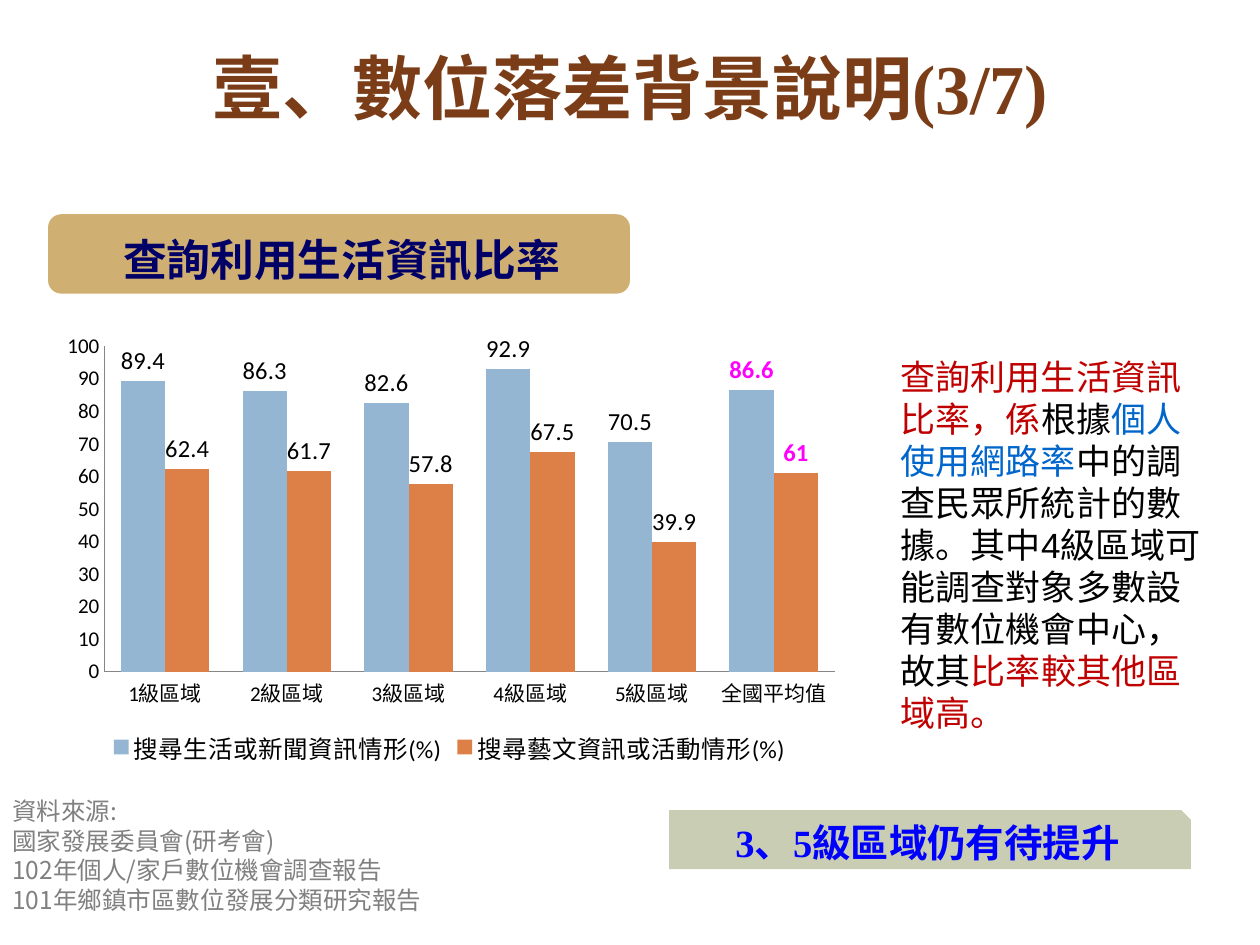
"""Build the slide on the share of residents looking up everyday information online."""
import pptx
import pptx.chart.data
import pptx.dml.color
import pptx.enum.chart
import pptx.enum.shapes
import pptx.enum.text
import pptx.oxml
import pptx.oxml.ns
import pptx.util

Cm = pptx.util.Cm
ALIGN = pptx.enum.text.PP_ALIGN
ANCHOR = pptx.enum.text.MSO_ANCHOR
SHAPE = pptx.enum.shapes.MSO_SHAPE


def color(hex_value):
    return pptx.dml.color.RGBColor.from_string(hex_value)


def style(font, hex_value, **values):
    for name, value in values.items():
        setattr(font, name, value)
    font.color.rgb = color(hex_value)


deck = pptx.Presentation()
deck.slide_width, deck.slide_height = Cm(25.4), Cm(19.05)
slide = deck.slides.add_slide(deck.slide_layouts[1])
shapes = slide.shapes
title, subtitle = shapes.title, slide.placeholders[1]

badge = shapes.add_shape(SHAPE.ROUNDED_RECTANGLE, Cm(0.97), Cm(4.32), Cm(11.73), Cm(1.6))
subtitle._element.addprevious(badge._element)
conclusion = shapes.add_shape(SHAPE.SNIP_1_RECTANGLE, Cm(13.49), Cm(16.33), Cm(10.52), Cm(1.19))
for panel, fill in ((badge, "D0AF72"), (conclusion, "C9CDB3")):
    panel.shadow.inherit = False
    panel.fill.solid()
    panel.fill.fore_color.rgb = color(fill)
    panel.line.fill.background()

figures = pptx.chart.data.CategoryChartData()
figures.categories = ["1級區域", "2級區域", "3級區域", "4級區域", "5級區域", "全國平均值"]
figures.add_series("搜尋生活或新聞資訊情形(%)", [89.4, 86.3, 82.6, 92.9, 70.5, 86.6])
figures.add_series("搜尋藝文資訊或活動情形(%)", [62.4, 61.7, 57.8, 67.5, 39.9, 61])
rates = shapes.add_chart(
    pptx.enum.chart.XL_CHART_TYPE.COLUMN_CLUSTERED,
    Cm(0.97), Cm(6.53), Cm(16.18), Cm(8.99), figures,
).chart
style(rates.font, "000000", name="Calibri", size=pptx.util.Pt(10))
rates.has_title = False
rates.has_legend = True
rates.legend.position = pptx.enum.chart.XL_LEGEND_POSITION.BOTTOM
rates.legend.include_in_layout = False
style(rates.legend.font, "000000", name="Calibri", size=pptx.util.Pt(14))

for axis in (rates.category_axis, rates.value_axis):
    axis.major_tick_mark = axis.minor_tick_mark = pptx.enum.chart.XL_TICK_MARK.NONE
    axis.has_major_gridlines = False
    axis.format.line.color.rgb = color("868686")
    style(axis.tick_labels.font, "000000", name="Calibri", size=pptx.util.Pt(12))
for name, value in {"minimum_scale": 0, "maximum_scale": 100, "major_unit": 10}.items():
    setattr(rates.value_axis, name, value)

columns = rates.plots[0]
for name, value in {"gap_width": 75, "overlap": 0, "vary_by_categories": False}.items():
    setattr(columns, name, value)
outside = pptx.enum.chart.XL_LABEL_POSITION.OUTSIDE_END
for series, fill in zip(columns.series, ("94B6D2", "DD8047")):
    series.format.fill.solid()
    series.format.fill.fore_color.rgb = color(fill)
    labels = series.data_labels
    labels.show_value = True
    labels.position = outside
    style(labels.font, "000000", name="Calibri", size=pptx.util.Pt(14))
    average = series.points[5].data_label
    style(average.font, "FF00FF", name="Calibri", size=pptx.util.Pt(14), bold=True)
    average.position = outside

plot_area = rates._chartSpace.chart.plotArea
for layout in plot_area.findall(pptx.oxml.ns.qn("c:layout")):
    plot_area.remove(layout)
frame = {"x": 0.07, "y": 0.05, "w": 0.91, "h": 0.73}
plot_area.insert(0, pptx.oxml.parse_xml(
    f'<c:layout {pptx.oxml.ns.nsdecls("c")}><c:manualLayout><c:layoutTarget val="inner"/>'
    '<c:xMode val="edge"/><c:yMode val="edge"/>'
    + "".join(f'<c:{side} val="{share}"/>' for side, share in frame.items())
    + "</c:manualLayout></c:layout>"))

explanation = shapes.add_textbox(Cm(17.91), Cm(7.04), Cm(6.81), Cm(7.95))
sources = shapes.add_textbox(Cm(0), Cm(15.93), Cm(10.24), Cm(2.64))
for holder, box in (
    (title, (1.93, 0.15, 21.56, 3.18)),
    (subtitle, (1.07, 4.52, 11.63, 1.4)),
):
    for side, length in zip(("left", "top", "width", "height"), box):
        setattr(holder, side, Cm(length))

texts = [
    (title, "Times New Roman", 40, True, ALIGN.CENTER, ANCHOR.MIDDLE,
     [[("壹、數位落差背景說明(3/7)", "7B3D17")]]),
    (subtitle, "Calibri", 25, True, ALIGN.CENTER, ANCHOR.MIDDLE,
     [[("查詢利用生活資訊比率", "000066")]]),
    (conclusion, "Times New Roman", 22, True, ALIGN.CENTER, ANCHOR.MIDDLE,
     [[("3、5級區域仍有待提升", "0000FF")]]),
    (explanation, "Arial", 20, False, ALIGN.LEFT, ANCHOR.TOP,
     [[("查詢利用生活資訊比率，係", "C00000"),
       ("根據", "000000"),
       ("個人使用網路率", "0066CC"),
       ("中的調查民眾所統計的數據。其中4級區域可能調查對象多數設有數位機會中心，故其", "000000"),
       ("比率較其他區域高。", "C00000")]]),
    (sources, "Noto Sans CJK SC", 14, False, ALIGN.LEFT, ANCHOR.TOP,
     [[(line, "808080")] for line in (
         "資料來源:",
         "國家發展委員會(研考會)",
         "102年個人/家戶數位機會調查報告",
         "101年鄉鎮市區數位發展分類研究報告")]),
]
for holder, face, size, bold, alignment, anchor, lines in texts:
    body = holder.text_frame
    body.word_wrap = True
    body.auto_size = pptx.enum.text.MSO_AUTO_SIZE.NONE
    body.vertical_anchor = anchor
    for index, line in enumerate(lines):
        paragraph = body.add_paragraph() if index else body.paragraphs[0]
        paragraph.alignment = alignment
        paragraph.space_before = pptx.util.Pt(0)
        for words, hex_value in line:
            run = paragraph.add_run()
            run.text = words
            style(run.font, hex_value, name=face, size=pptx.util.Pt(size), bold=bold)

subtitle_format = subtitle.text_frame.paragraphs[0]._p.get_or_add_pPr()
for name in ("marL", "indent"):
    subtitle_format.set(name, "0")
subtitle_format.append(pptx.oxml.parse_xml(f'<a:buNone {pptx.oxml.ns.nsdecls("a")}/>'))

deck.save("out.pptx")
